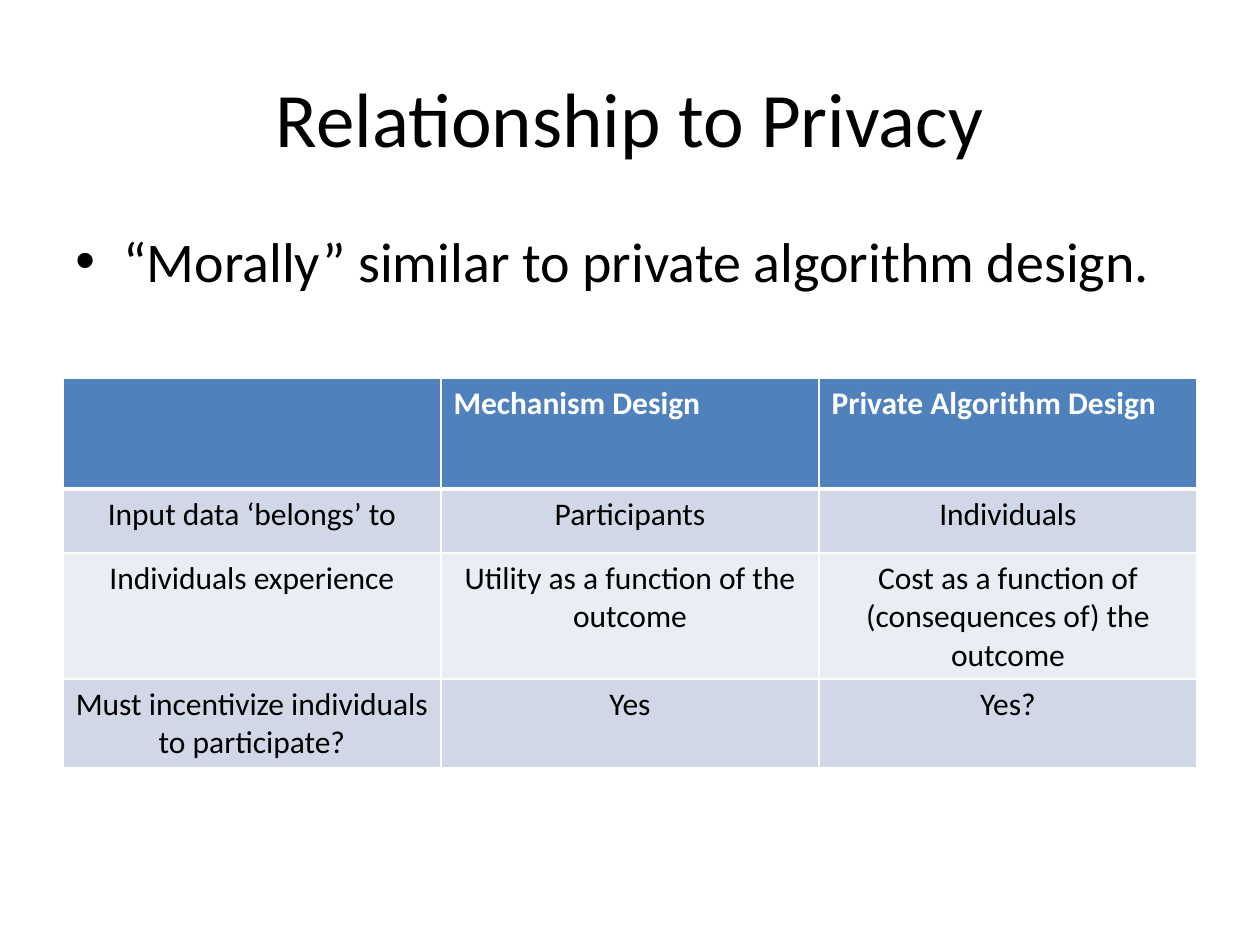
from lxml.etree import SubElement
from pptx import Presentation
from pptx.dml.color import RGBColor
from pptx.enum.text import MSO_ANCHOR as Anchor, PP_ALIGN as Align
from pptx.oxml.ns import qn
from pptx.util import Inches, Pt

COLUMNS, ROWS = 20, 150
HEADER_FILL, BAND_FILLS = "4F81BD", ("D0D8E8", "E9EDF4")
BLACK, WHITE = "000000", "FFFFFF"

TABLE_TEXT = [
    ["", "Mechanism Design", "Private Algorithm Design"],
    ["Input data ‘belongs’ to", "Participants", "Individuals"],
    ["Individuals experience", "Utility as a function of the outcome",
     "Cost as a function of (consequences of) the outcome"],
    ["Must incentivize individuals to participate?", "Yes", "Yes?"],
]


def color(value):
    return RGBColor.from_string(value)


def apply(target, values):
    for name, value in values.items():
        setattr(target, name, value)


class SlideBuilder:
    font_name = "Calibri"

    def __init__(self, presentation):
        self.slide = presentation.slides.add_slide(presentation.slide_layouts[6])
        self.column = presentation.slide_width / COLUMNS
        self.row = presentation.slide_height / ROWS

    def area(self, left, top, width, height):
        return (int(left * self.column), int(top * self.row),
                int(width * self.column), int(height * self.row))

    def fill_text(self, frame, text, size, text_color=BLACK, bold=False, **layout):
        paragraph = frame.paragraphs[0]
        apply(paragraph, layout)
        run = paragraph.add_run()
        run.text = text
        apply(run.font, {"name": self.font_name, "size": Pt(size), "bold": bold})
        run.font.color.rgb = color(text_color)
        return paragraph

    def text(self, area, text, size, anchor=Anchor.TOP, **layout):
        frame = self.slide.shapes.add_textbox(*self.area(*area)).text_frame
        apply(frame, {"word_wrap": True, "vertical_anchor": anchor})
        return self.fill_text(frame, text, size, **layout)

    def bullet(self, area, text, size):
        paragraph = self.text(area, text, size, space_before=Pt(size * 0.2))
        properties = paragraph._p.get_or_add_pPr()
        indent = Inches(0.38)
        properties.set("marL", str(indent))
        properties.set("indent", str(-indent))
        SubElement(properties, qn("a:buFont"), typeface="Arial")
        SubElement(properties, qn("a:buChar"), char="•")

    def border(self, cell, side, width):
        line = SubElement(cell._tc.get_or_add_tcPr(), qn(f"a:ln{side}"), w=str(Pt(width)))
        fill = SubElement(line, qn("a:solidFill"))
        SubElement(fill, qn("a:srgbClr"), val=WHITE)

    def cell(self, cell, text, row_index):
        header = row_index == 0
        thick_side = {0: "B", 1: "T"}.get(row_index)
        for side in "LRTB":
            self.border(cell, side, 3 if side == thick_side else 1)
        cell.fill.solid()
        cell.fill.fore_color.rgb = color(
            HEADER_FILL if header else BAND_FILLS[(row_index - 1) % 2])
        if text:
            self.fill_text(cell.text_frame, text, 18, WHITE if header else BLACK, header,
                           alignment=Align.LEFT if header else Align.CENTER)

    def table(self, area, content, row_heights):
        table = self.slide.shapes.add_table(
            len(content), len(content[0]), *self.area(*area)).table
        for row_index, (texts, height) in enumerate(zip(content, row_heights)):
            table.rows[row_index].height = Inches(height)
            for column_index, text in enumerate(texts):
                self.cell(table.cell(row_index, column_index), text, row_index)


def main():
    presentation = Presentation()
    apply(presentation, {"slide_width": Inches(10), "slide_height": Inches(7.5)})
    builder = SlideBuilder(presentation)
    builder.text((1, 6, 18, 25), "Relationship to Privacy", 44,
                 anchor=Anchor.MIDDLE, alignment=Align.CENTER)
    builder.bullet((1, 35, 18, 99), "“Morally” similar to private algorithm design.", 32)
    builder.table((1, 60, 18, 61.6), TABLE_TEXT, [0.88] + [0.51] * 3)
    presentation.save("out.pptx")


if __name__ == "__main__":
    main()
